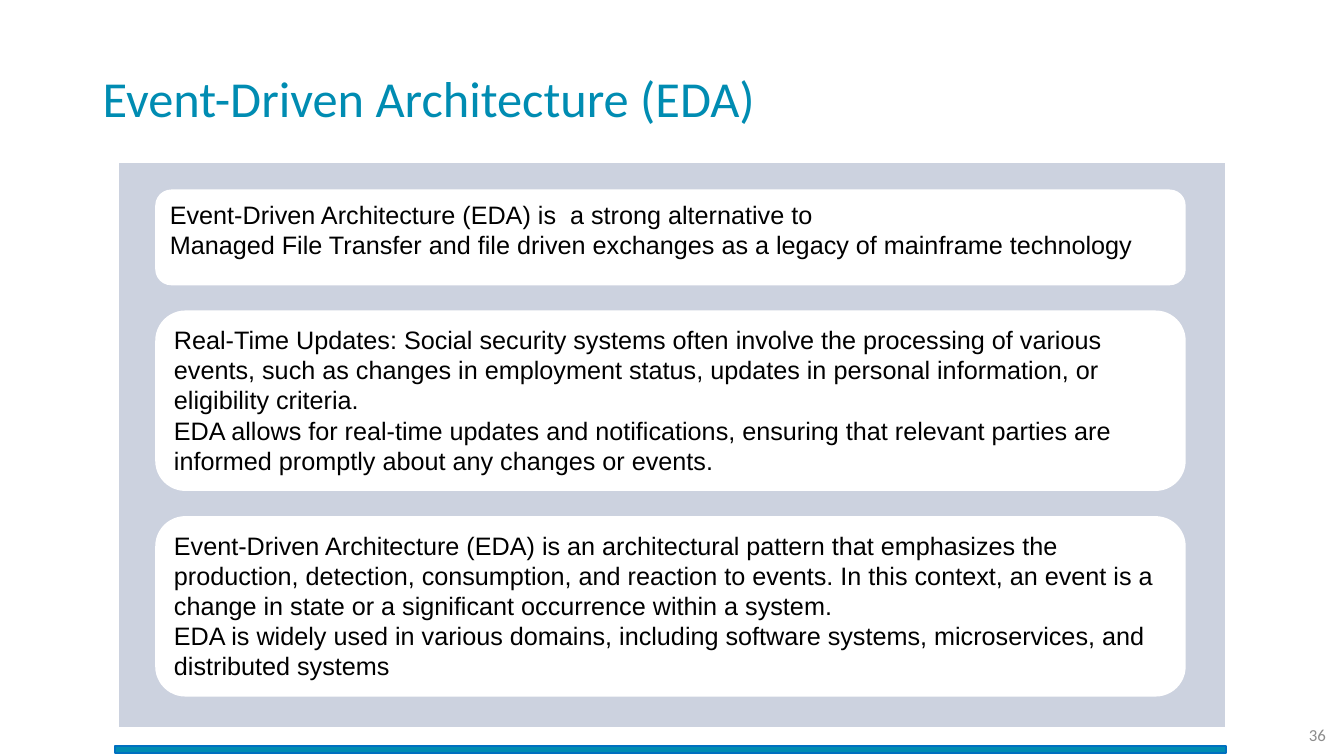
from dataclasses import dataclass

from lxml.etree import SubElement
from pptx import Presentation
from pptx.dml.color import RGBColor as Rgb
from pptx.enum.shapes import MSO_SHAPE as Kind
from pptx.enum.text import MSO_ANCHOR as Anchor, PP_ALIGN as Align
from pptx.oxml.ns import qn
from pptx.util import Inches, Pt

WIDE, HIGH = Inches(13.33), Inches(7.5)


@dataclass(frozen=True)
class Theme:
    teal: str = "008CB2"
    blue: str = "0070C0"
    navy: str = "002060"
    white: str = "FFFFFF"
    black: str = "000000"
    gray: str = "8C8C8C"
    head: str = "Calibri"
    body: str = "Arial"
    big: int = 36
    mid: int = 18
    small: int = 12


LOOK = Theme()

CARDS = [
    (12.67, [
        "Event-Driven Architecture (EDA) is  a strong alternative to",
        "Managed File Transfer and file driven exchanges as a legacy of "
        "mainframe technology",
    ]),
    (23.87, [
        "Real-Time Updates: Social security systems often involve the "
        "processing of various events, such as changes in employment status, "
        "updates in personal information, or eligibility criteria.",
        "EDA allows for real-time updates and notifications, ensuring that "
        "relevant parties are informed promptly about any changes or events.",
    ]),
    (23.87, [
        "Event-Driven Architecture (EDA) is an architectural pattern that "
        "emphasizes the production, detection, consumption, and reaction to "
        "events. In this context, an event is a change in state or a "
        "significant occurrence within a system.",
        "EDA is widely used in various domains, including software systems, "
        "microservices, and distributed systems",
    ]),
]


def area(left, top, width, height):
    """Turn percentages of the slide's width and height into lengths."""
    shares = ((left, WIDE), (top, HIGH), (width, WIDE), (height, HIGH))
    return [round(part * full / 100) for part, full in shares]


def write(shape, lines, font, size, color, anchor, align=Align.LEFT, pitch=None):
    frame = shape.text_frame
    frame.word_wrap = True
    frame.vertical_anchor = anchor
    frame.text = "\n".join(lines)
    for para in frame.paragraphs:
        para.alignment = align
        if pitch:
            para.line_spacing = pitch
        for run in para.runs:
            run.font.name = font
            run.font.size = Pt(size)
            run.font.color.rgb = Rgb.from_string(color)


def label(slide, box, text, size, color, **style):
    shape = slide.shapes.add_textbox(*area(*box))
    write(shape, [text], LOOK.head, size, color, Anchor.MIDDLE, **style)


def block(slide, kind, box, fill, line=None, alpha=None):
    """Add a filled shape; alpha is its opacity in percent."""
    shape = slide.shapes.add_shape(kind, *area(*box))
    shape.shadow.inherit = False
    shape.fill.solid()
    shape.fill.fore_color.rgb = Rgb.from_string(fill)
    if alpha:
        tint = shape.fill._xPr.find(qn("a:solidFill"))[0]
        SubElement(tint, qn("a:alpha"), val=str(alpha * 1000))
    if line:
        shape.line.color.rgb = Rgb.from_string(line)
        shape.line.width = Pt(1)
    else:
        shape.line.fill.background()
    return shape


def stack(slide, left, top, width, gap):
    """Place the cards one below another with equal gaps."""
    for height, lines in CARDS:
        box = (left, top, width, height)
        card = block(slide, Kind.ROUNDED_RECTANGLE, box, LOOK.white)
        write(card, lines, LOOK.body, LOOK.mid, LOOK.black, Anchor.TOP)
        top += height + gap


def main():
    deck = Presentation()
    deck.slide_width, deck.slide_height = WIDE, HIGH
    slide = deck.slides.add_slide(deck.slide_layouts[6])
    label(slide, (93.25, 94.53, 6.15, 5.33), "36", LOOK.small, LOOK.gray,
          align=Align.RIGHT)
    block(slide, Kind.RECTANGLE, (8.55, 98.67, 82.67, 0.93), LOOK.teal, LOOK.blue)
    label(slide, (6.9, 3.73, 86.27, 19.33), "Event-Driven Architecture (EDA)",
          LOOK.big, LOOK.teal, pitch=0.9)
    block(slide, Kind.RECTANGLE, (8.78, 21.47, 82.44, 74.8), LOOK.navy,
          LOOK.white, alpha=20)
    stack(slide, left=11.55, top=25.07, width=76.67, gap=3.33)
    deck.save("out.pptx")


if __name__ == "__main__":
    main()
